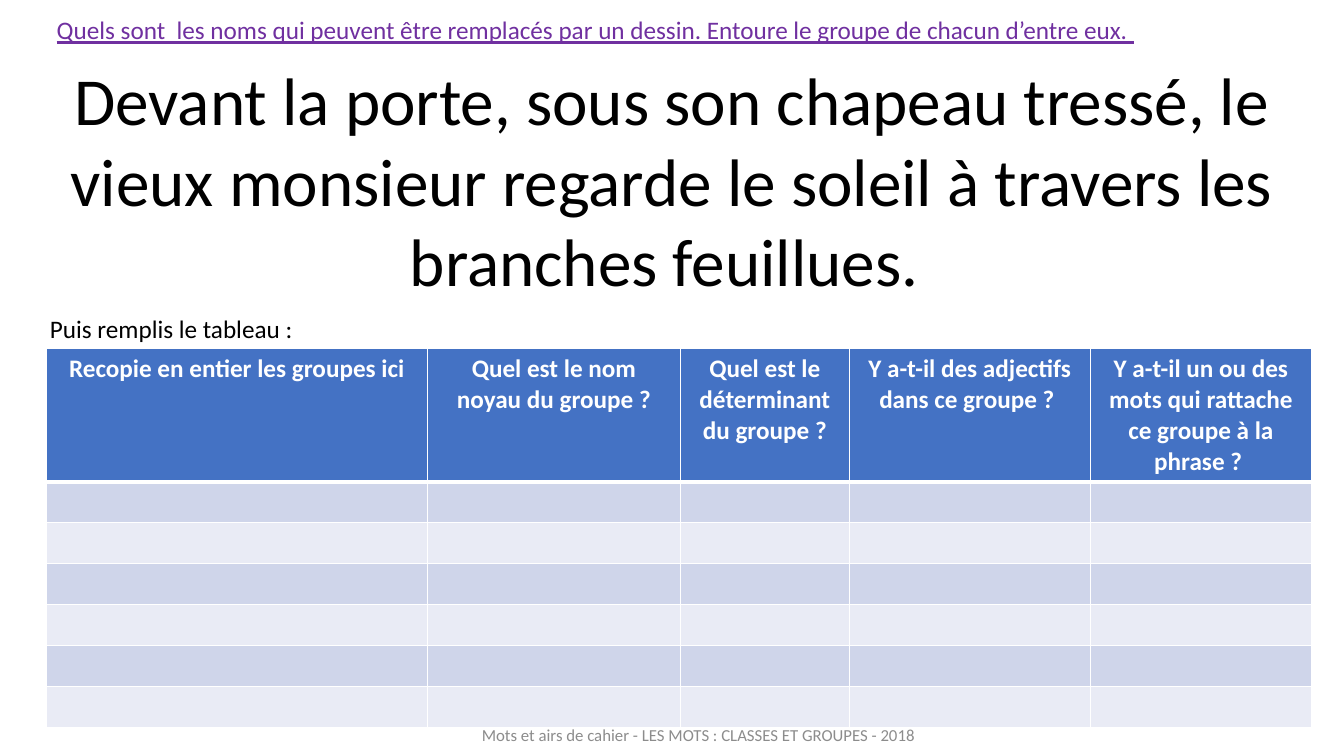
from dataclasses import dataclass

from lxml.etree import SubElement
from pptx import Presentation
from pptx.dml.color import RGBColor
from pptx.enum.text import MSO_ANCHOR as Anchor, MSO_AUTO_SIZE as AutoSize, PP_ALIGN as Align
from pptx.oxml.ns import qn
from pptx.slide import Slide
from pptx.table import _Cell as Cell
from pptx.text.text import _Paragraph as Paragraph
from pptx.util import Cm, Pt

WHITE, BLACK, PURPLE, GREY = "FFFFFF", "000000", "7030A0", "8C8C8C"
HEADER_BLUE = "4472C4"
BANDS = ("CFD5EA", "E9EBF5")


@dataclass
class Sentence:
    text: str
    left: float
    top: float
    width: float
    height: float
    size: float
    color: str = BLACK
    align: Align = Align.LEFT
    anchor: Anchor = Anchor.TOP
    underline: bool = False


@dataclass
class Column:
    question: str
    width: float


INSTRUCTION = Sentence(
    "Quels sont  les noms qui peuvent être remplacés par un dessin. "
    "Entoure le groupe de chacun d’entre eux. ",
    1.18, 0.24, 28.42, 1.03, 18, PURPLE, underline=True)
EXERCISE = Sentence(
    "Devant la porte, sous son chapeau tressé, le vieux monsieur regarde "
    "le soleil à travers les branches feuillues. ",
    1.3, 1.35, 31.27, 6.4, 48, align=Align.CENTER)
FOOTER = Sentence(
    "Mots et airs de cahier - LES MOTS : CLASSES ET GROUPES - 2018",
    11.23, 18.01, 12.75, 1.01, 12, GREY, Align.CENTER, Anchor.MIDDLE)
TABLE_PROMPT = Sentence("Puis remplis le tableau :", 1.01, 7.76, 9.45, 1.03, 18)

COLUMNS = [
    Column("Recopie en entier les groupes ici", 9.6),
    Column("Quel est le nom noyau du groupe ?", 6.38),
    Column("Quel est le déterminant du groupe ?", 4.25),
    Column("Y a-t-il des adjectifs dans ce groupe ? ", 6.08),
    Column("Y a-t-il un ou des mots qui rattache ce groupe à la phrase ? ", 5.57),
]
TABLE_LEFT, TABLE_TOP = 1.17, 8.79
HEADER_HEIGHT, ANSWER_HEIGHT, ANSWER_ROWS = 3.25, 1.03, 6


def rgb(color: str) -> RGBColor:
    return RGBColor.from_string(color)


def write(paragraph: Paragraph, text: str, size: float, color: str,
          align: Align, **extra: bool) -> None:
    paragraph.alignment = align
    run = paragraph.add_run()
    run.text = text
    for name, value in {"name": "Calibri", "size": Pt(size), **extra}.items():
        setattr(run.font, name, value)
    run.font.color.rgb = rgb(color)


def draw_sentence(slide: Slide, item: Sentence) -> None:
    box = slide.shapes.add_textbox(*map(Cm, (item.left, item.top, item.width, item.height)))
    layout = {"word_wrap": True, "auto_size": AutoSize.NONE, "vertical_anchor": item.anchor}
    for name, value in layout.items():
        setattr(box.text_frame, name, value)
    write(box.text_frame.paragraphs[0], item.text, item.size, item.color,
          item.align, underline=item.underline)


def style_cell(cell: Cell, fill: str, top: float, bottom: float) -> None:
    properties = cell._tc.get_or_add_tcPr()
    for side, points in {"L": 1, "R": 1, "T": top, "B": bottom}.items():
        border = SubElement(properties, qn(f"a:ln{side}"), w=str(Pt(points)))
        solid = SubElement(border, qn("a:solidFill"))
        SubElement(solid, qn("a:srgbClr"), val=WHITE)
    cell.fill.solid()
    cell.fill.fore_color.rgb = rgb(fill)


def draw_table(slide: Slide) -> None:
    width = sum(column.width for column in COLUMNS)
    height = HEADER_HEIGHT + ANSWER_ROWS * ANSWER_HEIGHT
    table = slide.shapes.add_table(
        ANSWER_ROWS + 1, len(COLUMNS),
        Cm(TABLE_LEFT), Cm(TABLE_TOP), Cm(width), Cm(height)).table
    for index, row in enumerate(table.rows):
        row.height = Cm(ANSWER_HEIGHT if index else HEADER_HEIGHT)
        fill = BANDS[(index - 1) % 2] if index else HEADER_BLUE
        for cell in row.cells:
            style_cell(cell, fill, top=3 if index == 1 else 1, bottom=1 if index else 3)
    for index, column in enumerate(COLUMNS):
        table.columns[index].width = Cm(column.width)
        write(table.cell(0, index).text_frame.paragraphs[0], column.question,
              18, WHITE, Align.CENTER, bold=True)


def main() -> None:
    presentation = Presentation()
    presentation.slide_width, presentation.slide_height = Cm(33.87), Cm(19.05)
    slide = presentation.slides.add_slide(presentation.slide_layouts[6])

    # Instruction, exercise sentence, footer and table prompt
    for sentence in (INSTRUCTION, EXERCISE, FOOTER, TABLE_PROMPT):
        draw_sentence(slide, sentence)

    # Answer table
    draw_table(slide)

    presentation.save("out.pptx")


if __name__ == "__main__":
    main()
